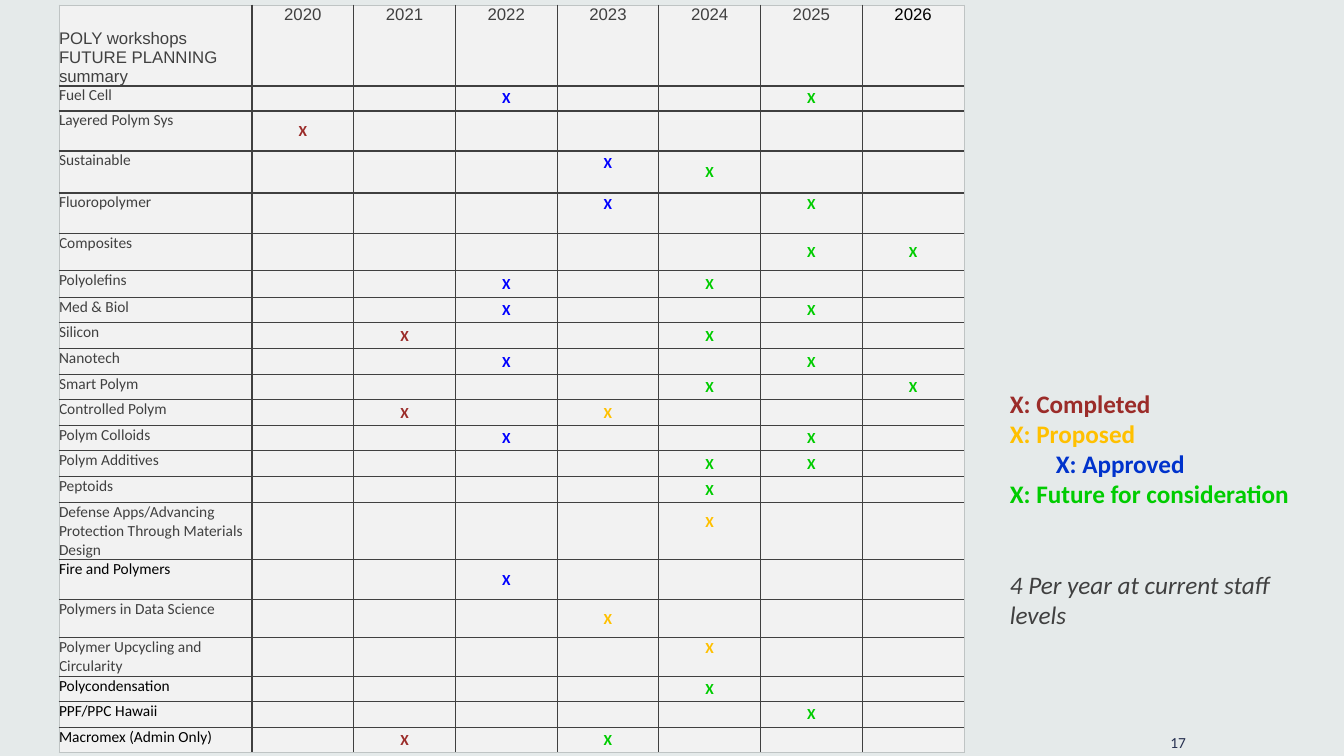
from dataclasses import dataclass

from lxml import etree
from pptx import Presentation
from pptx import util as u
from pptx.dml.color import RGBColor
from pptx.enum import text as t
from pptx.oxml.ns import qn


@dataclass(frozen=True)
class Theme:
    back: str = "E5EAEA"
    cell: str = "F2F2F2"
    ink: str = "404040"
    black: str = "000000"
    edge: str = "BFC4C4"
    navy: str = "263050"
    done: str = "9B2C29"
    offer: str = "FFC000"
    okay: str = "0000FF"
    later: str = "00CC00"
    blue: str = "0033CC"
    head: int = 12
    body: int = 11
    key: int = 18
    sans: str = "Arial"
    main: str = "Calibri"


T = Theme()
MARK = {"C": T.done, "P": T.offer, "A": T.okay, "F": T.later}
YEARS = range(2020, 2027)
TITLE = "POLY workshops FUTURE PLANNING summary"

# Name, height in px, marks by year, name colour, space under the marks
ROWS = [
    ("Fuel Cell", 25, {2022: "A", 2025: "F"}, T.ink, 0),
    ("Layered Polym Sys", 40, {2020: "C"}, T.ink, 0),
    ("Sustainable", 42, {2023: "A", 2024: "F"}, T.ink, {2023: 18}),
    ("Fluoropolymer", 41, {2023: "A", 2025: "F"}, T.ink, 18),
    ("Composites", 37, {2025: "F", 2026: "F"}, T.ink, 0),
    ("Polyolefins", 27, {2022: "A", 2024: "F"}, T.ink, 0),
    ("Med & Biol", 25, {2022: "A", 2025: "F"}, T.ink, 0),
    ("Silicon", 26, {2021: "C", 2024: "F"}, T.ink, 0),
    ("Nanotech", 26, {2022: "A", 2025: "F"}, T.ink, 0),
    ("Smart Polym", 25, {2024: "F", 2026: "F"}, T.ink, 0),
    ("Controlled Polym", 26, {2021: "C", 2023: "P"}, T.ink, 0),
    ("Polym Colloids", 25, {2022: "A", 2025: "F"}, T.ink, 0),
    ("Polym Additives", 26, {2024: "F", 2025: "F"}, T.ink, 0),
    ("Peptoids", 26, {2024: "F"}, T.ink, 0),
    ("Defense Apps/Advancing Protection Through Materials Design", 57,
     {2024: "P"}, T.ink, 18),
    ("Fire and Polymers", 40, {2022: "A"}, T.black, 0),
    ("Polymers in Data Science", 38, {2023: "P"}, T.ink, 0),
    ("Polymer Upcycling and Circularity", 39, {2024: "P"}, T.ink, 18),
    ("Polycondensation", 25, {2024: "F"}, T.black, 0),
    ("PPF/PPC Hawaii", 26, {2025: "F"}, T.black, 0),
    ("Macromex (Admin Only)", 25, {2021: "C", 2023: "F"}, T.black, 0),
]


def px(n):
    return u.Emu(round(n * 914400 / 100.8))


def add_run(para, words, size, color, font=T.main, bold=False, slant=False):
    run = para.add_run()
    run.text = words
    run.font.size = u.Pt(size)
    run.font.name = font
    run.font.bold = bold
    run.font.italic = slant
    run.font.color.rgb = RGBColor.from_string(color)


def add_edge(cell, side, color, width):
    line = etree.SubElement(cell._tc.get_or_add_tcPr(), qn("a:" + side),
                            w=str(u.Pt(width)))
    fill = etree.SubElement(line, qn("a:solidFill"))
    etree.SubElement(fill, qn("a:srgbClr"), val=color)


def set_cell(cell, words, size, color, font=T.main, bold=False,
             align=t.PP_ALIGN.CENTER, anchor=t.MSO_ANCHOR.MIDDLE, under=0):
    cell.margin_left = cell.margin_right = cell.margin_top = 0
    cell.margin_bottom = px(under)
    cell.vertical_anchor = anchor
    para = cell.text_frame.paragraphs[0]
    para.alignment = align
    if words:
        add_run(para, words, size, color, font, bold)
    else:
        # Keeps an empty cell from growing its row
        etree.SubElement(para._p, qn("a:endParaRPr"), sz=str(size * 100))


def frame_cell(cell, row, col, last):
    outer = {"lnL": col == 0, "lnR": col == len(YEARS),
             "lnT": row == 0, "lnB": row == last}
    for side, rim in outer.items():
        add_edge(cell, side, T.edge if rim else T.ink, 0.5 if rim else 1)
    cell.fill.solid()
    cell.fill.fore_color.rgb = RGBColor.from_string(T.cell)


def add_plan(slide):
    highs = [81] + [row[1] for row in ROWS]
    grid = slide.shapes.add_table(len(highs), len(YEARS) + 1, px(59), px(5),
                                  px(905), px(sum(highs))).table
    grid.horz_banding = False
    for row, high in zip(grid.rows, highs):
        row.height = px(high)
    grid.columns[0].width = px(193)
    for col in range(1, len(YEARS) + 1):
        grid.columns[col].width = px(712) // len(YEARS)

    # Header row
    set_cell(grid.cell(0, 0), TITLE, T.head, T.ink, T.sans,
             align=t.PP_ALIGN.LEFT, anchor=t.MSO_ANCHOR.BOTTOM)
    for col, year in enumerate(YEARS, 1):
        color = T.black if year == YEARS[-1] else T.ink
        set_cell(grid.cell(0, col), str(year), T.head, color, T.sans,
                 anchor=t.MSO_ANCHOR.TOP)

    # Workshop rows
    for row, (name, _, marks, color, under) in enumerate(ROWS, 1):
        set_cell(grid.cell(row, 0), name, T.body, color,
                 align=t.PP_ALIGN.LEFT, anchor=t.MSO_ANCHOR.TOP)
        for col, year in enumerate(YEARS, 1):
            gap = under.get(year, 0) if isinstance(under, dict) else under
            state = marks.get(year)
            set_cell(grid.cell(row, col), "X" if state else "", T.body,
                     MARK.get(state, T.ink), bold=True, under=gap)

    # Borders and fills
    for row in range(len(highs)):
        for col in range(len(YEARS) + 1):
            frame_cell(grid.cell(row, col), row, col, len(ROWS))


def add_box(slide, left, top, width, height):
    box = slide.shapes.add_textbox(px(left), px(top), px(width), px(height))
    box.text_frame.word_wrap = True
    return box.text_frame


def add_key(slide):
    frame = add_box(slide, 1000, 383, 339, 224)
    lines = [("X: Completed", T.done, 0), ("X: Proposed", T.offer, 0),
             ("X: Approved", T.blue, 46),
             ("X: Future for consideration", T.later, 0)]
    for i, (words, color, inset) in enumerate(lines):
        para = frame.add_paragraph() if i else frame.paragraphs[0]
        if inset:
            para._p.get_or_add_pPr().set("marL", str(px(inset)))
        add_run(para, words, T.key, color, bold=True)
    note = frame.add_paragraph()
    note.space_before = u.Pt(43)
    add_run(note, "4 Per year at current staff levels", T.key, T.ink,
            slant=True)


def add_number(slide):
    frame = add_box(slide, 1126, 729, 70, 26)
    frame.vertical_anchor = t.MSO_ANCHOR.MIDDLE
    para = frame.paragraphs[0]
    para.alignment = t.PP_ALIGN.RIGHT
    add_run(para, "17", T.body, T.navy)


def main():
    deck = Presentation()
    deck.slide_width, deck.slide_height = px(1344), px(756)
    slide = deck.slides.add_slide(deck.slide_layouts[6])
    fill = slide.background.fill
    fill.solid()
    fill.fore_color.rgb = RGBColor.from_string(T.back)
    add_plan(slide)
    add_key(slide)
    add_number(slide)
    deck.save("out.pptx")


if __name__ == "__main__":
    main()
